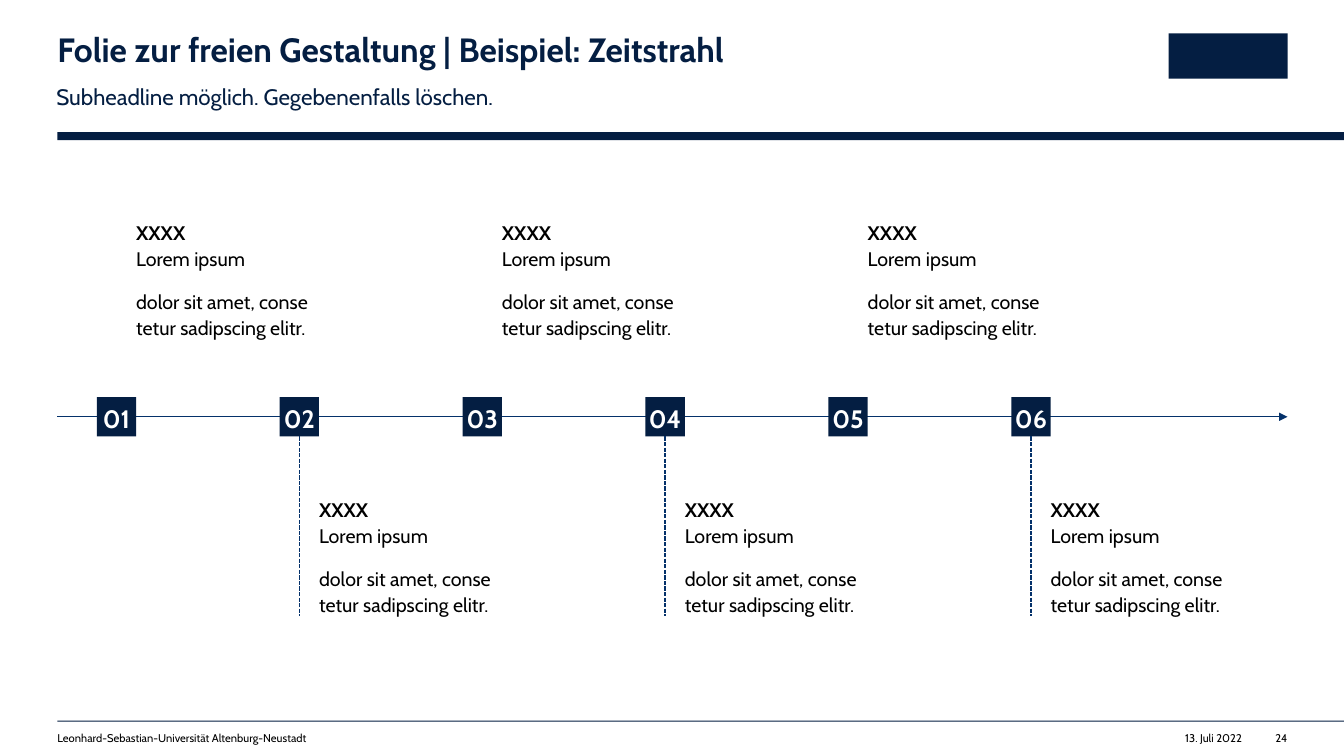
import pptx
import pptx.dml.color
import pptx.enum.dml
import pptx.enum.shapes
import pptx.enum.text
import pptx.oxml.ns
import pptx.util
from lxml import etree
from pptx.util import Inches

NAVY = pptx.dml.color.RGBColor(0x04, 0x1E, 0x42)
BLUE = pptx.dml.color.RGBColor(0x04, 0x31, 0x6A)
BLACK = pptx.dml.color.RGBColor(0x00, 0x00, 0x00)
WHITE = pptx.dml.color.RGBColor(0xFF, 0xFF, 0xFF)

ALIGN = pptx.enum.text.PP_ALIGN
RECTANGLE = pptx.enum.shapes.MSO_SHAPE.RECTANGLE

LEFT, RIGHT = 0.57, 12.77
SQUARE_SIZE = 0.39
SQUARE_TOP = 3.94
FIRST_SQUARE, LAST_SQUARE = 0.96, 10.03
STEPS = 6


def style_paragraph(paragraph, size, color, bold=False, align=ALIGN.LEFT, spacing=1.0, after=0):
    paragraph.font.name = "Cabin"
    paragraph.font.size = pptx.util.Pt(size)
    paragraph.font.bold = bold
    paragraph.font.color.rgb = color
    paragraph.alignment = align
    paragraph.line_spacing = spacing
    paragraph.space_after = pptx.util.Pt(after)


def prepare_frame(shape, inset=0):
    """Wrap the text of a shape, set equal insets and return its text frame."""
    frame = shape.text_frame
    frame.word_wrap = True
    frame.auto_size = pptx.enum.text.MSO_AUTO_SIZE.NONE
    frame.margin_left = frame.margin_right = Inches(inset)
    frame.margin_top = frame.margin_bottom = Inches(inset / 2)
    return frame


presentation = pptx.Presentation()
presentation.slide_width = Inches(13.33)
presentation.slide_height = Inches(7.5)
slide = presentation.slides.add_slide(presentation.slide_layouts[5])
shapes = slide.shapes

# Header and footer rules, plain block in the logo's place
for left, top, width, height in [
    (LEFT, 1.31, 12.76, 0.08),
    (LEFT, 7.15, 12.76, 0.01),
    (11.59, 0.33, 1.18, 0.45),
]:
    block = shapes.add_shape(RECTANGLE, Inches(left), Inches(top), Inches(width), Inches(height))
    block.shadow.inherit = False
    block.fill.solid()
    block.fill.fore_color.rgb = NAVY
    block.line.fill.background()

# Title and subheadline
title = shapes.title
title.left, title.top = Inches(LEFT), Inches(0.33)
title.width, title.height = Inches(7.49), Inches(0.36)
title_frame = prepare_frame(title)
title_frame.text = "Folie zur freien Gestaltung | Beispiel: Zeitstrahl"
style_paragraph(title_frame.paragraphs[0], 24, NAVY, bold=True, spacing=0.9)

subheadline = shapes.add_textbox(Inches(0.46), Inches(0.75), Inches(7.49), Inches(0.27))
subheadline_frame = prepare_frame(subheadline, inset=0.1)
subheadline_frame.text = "Subheadline möglich. Gegebenenfalls löschen."
style_paragraph(subheadline_frame.paragraphs[0], 16, NAVY, spacing=1.1, after=8)

# Footer
for text, left, width, align in [
    ("Leonhard-Sebastian-Universität Altenburg-Neustadt", LEFT, 5.98, ALIGN.LEFT),
    ("13. Juli 2022", 11.52, 0.8, ALIGN.RIGHT),
    ("24", 12.47, 0.3, ALIGN.RIGHT),
]:
    footer = shapes.add_textbox(Inches(left), Inches(7.26), Inches(width), Inches(0.13))
    footer_frame = prepare_frame(footer)
    footer_frame.text = text
    style_paragraph(footer_frame.paragraphs[0], 8, BLACK, align=align)

# Time axis
STRAIGHT = pptx.enum.shapes.MSO_CONNECTOR.STRAIGHT
axis_y = Inches(SQUARE_TOP + SQUARE_SIZE / 2)
axis = shapes.add_connector(STRAIGHT, Inches(LEFT), axis_y, Inches(RIGHT), axis_y)
axis.line.color.rgb = BLUE
axis.line.width = pptx.util.Pt(1)
etree.SubElement(axis.line._get_or_add_ln(), pptx.oxml.ns.qn("a:tailEnd"), type="triangle")
connectors = [axis]

# Steps: odd ones have their text above the axis, even ones below
pitch = (LAST_SQUARE - FIRST_SQUARE) / (STEPS - 1)
for index in range(STEPS):
    above = index % 2 == 0
    square_left = FIRST_SQUARE + index * pitch

    square = shapes.add_shape(
        RECTANGLE, Inches(square_left), Inches(SQUARE_TOP), Inches(SQUARE_SIZE), Inches(SQUARE_SIZE)
    )
    square.shadow.inherit = False
    square.fill.solid()
    square.fill.fore_color.rgb = NAVY
    square.line.fill.background()
    square_frame = prepare_frame(square)
    square_frame.vertical_anchor = pptx.enum.text.MSO_ANCHOR.MIDDLE
    square_frame.text = f"{index + 1:02}"
    style_paragraph(
        square_frame.paragraphs[0], 18, WHITE, bold=True, align=ALIGN.CENTER, spacing=1.1, after=12
    )

    description = shapes.add_textbox(
        Inches(square_left + SQUARE_SIZE), Inches(2.17 if above else 4.92), Inches(1.95), Inches(1.18)
    )
    description_frame = prepare_frame(description)
    heading = description_frame.paragraphs[0]
    label = heading.add_run()
    label.text = "XXXX"
    label.font.bold = True
    heading.add_line_break()
    heading.add_run().text = "Lorem ipsum"
    body = description_frame.add_paragraph()
    body.text = "dolor sit amet, conse\vtetur sadipscing elitr."
    for paragraph in (heading, body):
        style_paragraph(paragraph, 14, BLACK, spacing=1.1, after=12)

    center = Inches(square_left + SQUARE_SIZE / 2)
    if above:
        stem = shapes.add_connector(STRAIGHT, center, Inches(2.17), center, Inches(SQUARE_TOP))
        stem.end_connect(square, 0)
    else:
        stem = shapes.add_connector(
            STRAIGHT, center, Inches(SQUARE_TOP + SQUARE_SIZE), center, Inches(6.11)
        )
        stem.begin_connect(square, 2)
    stem.line.color.rgb = WHITE if above else BLUE
    stem.line.width = pptx.util.Pt(1)
    stem.line.dash_style = pptx.enum.dml.MSO_LINE.SQUARE_DOT
    connectors.append(stem)

for connector in connectors:
    etree.SubElement(connector._element.spPr, pptx.oxml.ns.qn("a:effectLst"))

presentation.save("out.pptx")
